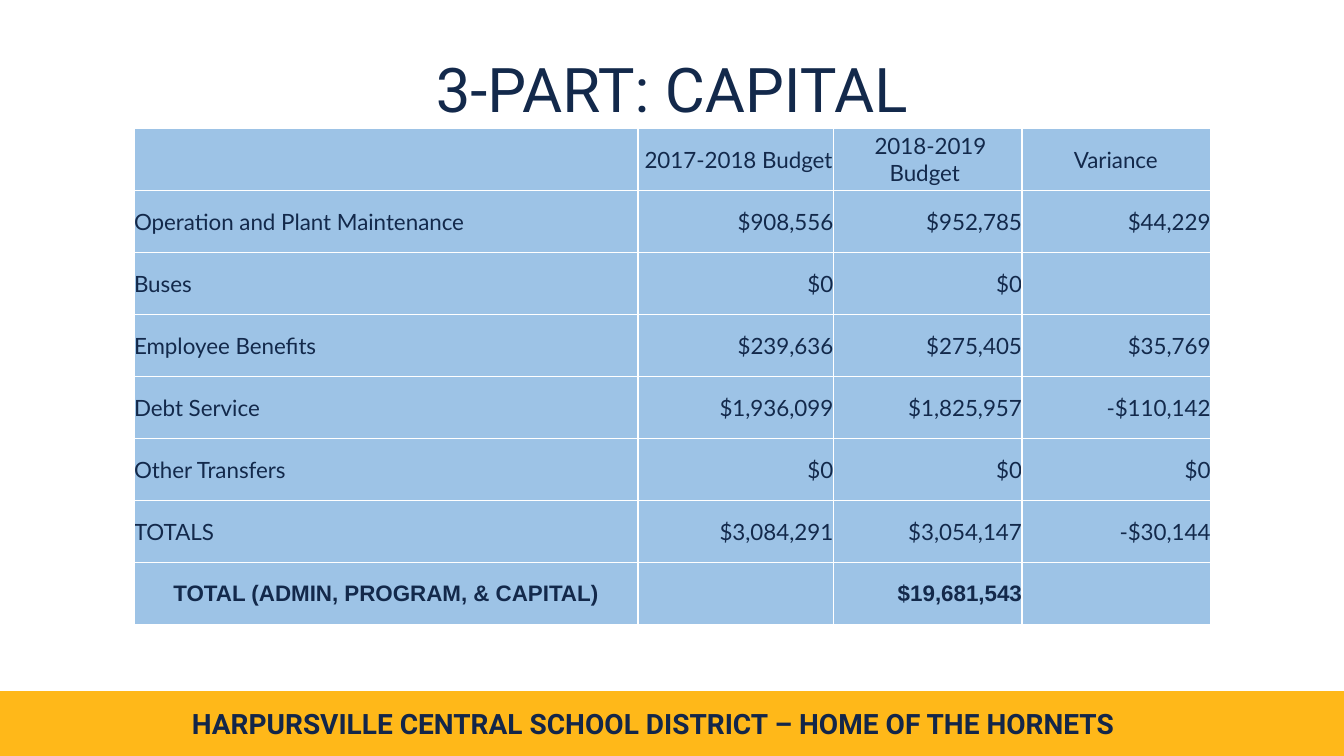
from lxml.etree import SubElement
from pptx import Presentation
from pptx.dml.color import RGBColor
from pptx.enum.shapes import MSO_SHAPE as Shape
from pptx.enum.text import MSO_ANCHOR as Anchor, PP_ALIGN as Align
from pptx.oxml.ns import qn
from pptx.util import Pt

# Content
TITLE = "3-PART: CAPITAL"
FOOTER = "HARPURSVILLE CENTRAL SCHOOL DISTRICT – HOME OF THE HORNETS"
ROWS = [
    ("", " 2017-2018 Budget ", " 2018-2019 Budget ", " Variance "),
    ("Operation and Plant Maintenance", "$908,556", "$952,785", "$44,229"),
    ("Buses", "$0", "$0", ""),
    ("Employee Benefits", "$239,636", "$275,405", "$35,769"),
    ("Debt Service", "$1,936,099", "$1,825,957", "-$110,142"),
    ("Other Transfers", "$0", "$0", "$0"),
    ("TOTALS", "$3,084,291", "$3,054,147", "-$30,144"),
    ("TOTAL (ADMIN, PROGRAM, & CAPITAL)", "", "$19,681,543", ""),
]
WIDTHS = (360, 139.5, 134.75, 134.75)
ROW_H = 44.28
NAVY, GOLD, BLUE, WHITE = "13294B", "FFB819", "9DC3E6", "FFFFFF"


def color(code):
    return RGBColor.from_string(code)


def paint(fill, code):
    fill.solid()
    fill.fore_color.rgb = color(code)


def write(frame, text, size, face, align, bold=False, ink=NAVY):
    para = frame.paragraphs[0]
    para.alignment = align
    run = para.add_run()
    run.text = text
    font = run.font
    font.size, font.name, font.bold = Pt(size), face, bold
    font.color.rgb = color(ink)
    return para


def text_box(left, top, width, height):
    box = slide.shapes.add_textbox(Pt(left), Pt(top), Pt(width), Pt(height))
    box.text_frame.word_wrap = True
    return box


def border(cell):
    props = cell._tc.get_or_add_tcPr()
    for i, side in enumerate(("lnL", "lnR", "lnT", "lnB")):
        line = props.makeelement(qn("a:" + side), {"w": str(Pt(1))})
        fill = SubElement(line, qn("a:solidFill"))
        SubElement(fill, qn("a:srgbClr"), val=WHITE)
        props.insert(i, line)


deck = Presentation()
deck.slide_width, deck.slide_height = Pt(960), Pt(540)
slide = deck.slides.add_slide(deck.slide_layouts[6])

# Footer band
band = slide.shapes.add_shape(Shape.RECTANGLE, 0, Pt(494), Pt(960), Pt(45.5))
band.shadow.inherit = False
paint(band.fill, GOLD)
band.line.color.rgb = color(GOLD)
band.line.width = Pt(1)
foot = text_box(126.5, 501, 680, 31.5)
write(foot.text_frame, FOOTER, 20, "Roboto", Align.CENTER, True, "132649")

# Title
head = text_box(66, 28.75, 828, 75)
paint(head.fill, WHITE)
head.text_frame.vertical_anchor = Anchor.MIDDLE
write(head.text_frame, TITLE, 44, "Roboto", Align.CENTER).line_spacing = 0.9

# Budget table
grid = slide.shapes.add_table(len(ROWS), len(WIDTHS), Pt(95.75), Pt(91.75),
                              Pt(sum(WIDTHS)), Pt(ROW_H * len(ROWS))).table
for col, width in zip(grid.columns, WIDTHS):
    col.width = Pt(width)
last = len(ROWS) - 1
for r, row in enumerate(ROWS):
    grid.rows[r].height = Pt(ROW_H)
    for c, text in enumerate(row):
        cell = grid.cell(r, c)
        paint(cell.fill, BLUE)
        border(cell)
        cell.vertical_anchor = Anchor.MIDDLE
        cell.margin_left = cell.margin_right = 0
        cell.margin_top = cell.margin_bottom = 0
        if not text:
            continue
        if r == 0 or (r == last and c == 0):
            align = Align.CENTER
        else:
            align = Align.RIGHT if c else Align.LEFT
        face = "Arial" if r == last else "Lato"
        write(cell.text_frame, text, 16, face, align, r == last)

deck.save("out.pptx")
